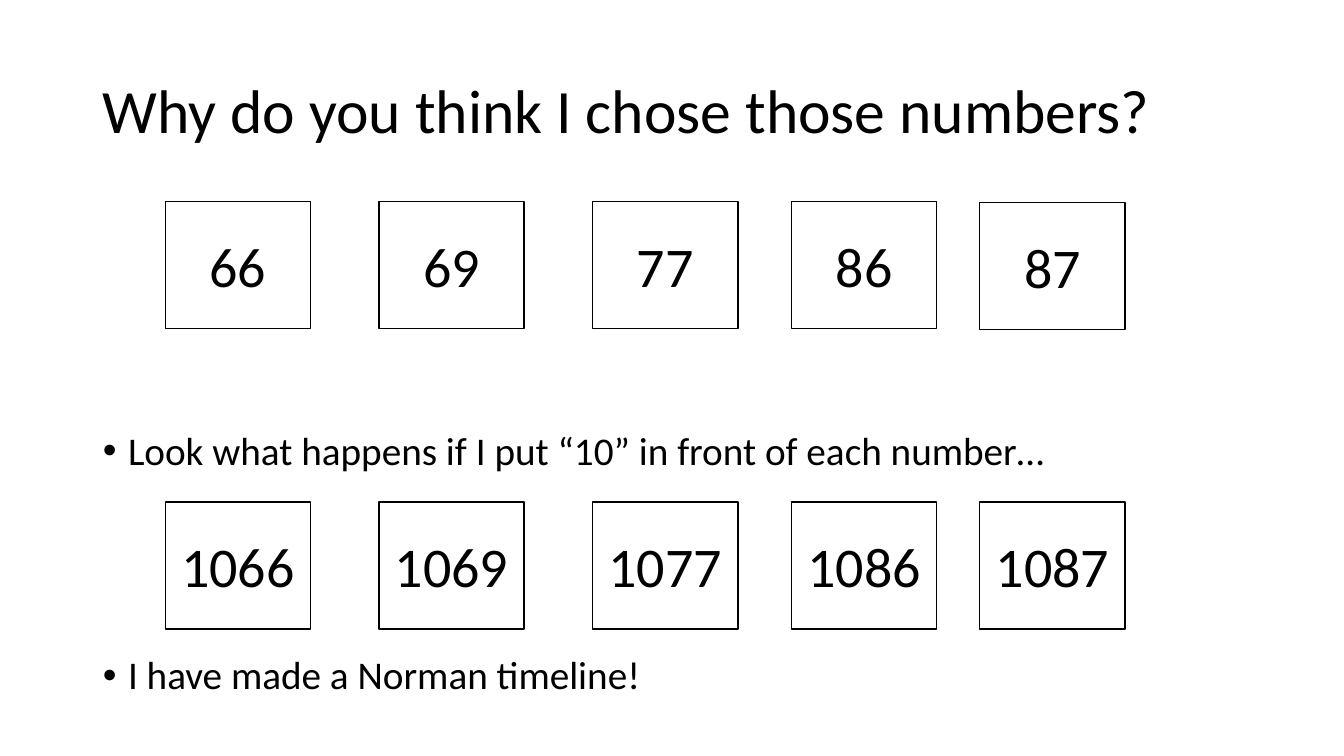
from dataclasses import dataclass

from lxml.etree import SubElement
from pptx import Presentation
from pptx.dml.color import RGBColor
from pptx.enum.shapes import MSO_SHAPE
from pptx.enum.text import MSO_ANCHOR, MSO_AUTO_SIZE, PP_ALIGN
from pptx.oxml.ns import qn
from pptx.util import Inches, Pt

BLACK = RGBColor(0, 0, 0)
WHITE = RGBColor(255, 255, 255)
FONT = "Calibri"
SLIDE_WIDTH, SLIDE_HEIGHT = Inches(13.33), Inches(7.5)


@dataclass(frozen=True)
class Area:
    """A rectangle in percent of the slide's width and height."""
    left: float
    top: float
    width: float
    height: float

    def emu(self) -> tuple[int, int, int, int]:
        return (round(self.left * SLIDE_WIDTH / 100), round(self.top * SLIDE_HEIGHT / 100),
                round(self.width * SLIDE_WIDTH / 100), round(self.height * SLIDE_HEIGHT / 100))


@dataclass(frozen=True)
class Event:
    number: str
    left: float
    number_top: float = 26.67


TITLE_AREA = Area(6.9, 5.33, 86.25, 19.33)
BODY_AREA = Area(6.9, 56.4, 86.25, 41.2)
CARD_WIDTH, CARD_HEIGHT = 10.8, 16.8
YEAR_TOP = 66.4
GAP_FOR_YEARS = Pt(130)

EVENTS = [
    Event("66", 12.3),
    Event("69", 28.2),
    Event("77", 44.1),
    Event("86", 58.9),
    Event("87", 72.9, 26.8),
]
REMARKS = [
    "Look what happens if I put “10” in front of each number…",
    "I have made a Norman timeline!",
]


def style(paragraph, size: int) -> None:
    for run in paragraph.runs:
        run.font.size = Pt(size)
        run.font.name = FONT
        run.font.color.rgb = BLACK


def place(placeholder, area: Area) -> None:
    placeholder.left, placeholder.top, placeholder.width, placeholder.height = area.emu()
    placeholder.text_frame.auto_size = MSO_AUTO_SIZE.NONE


def add_title(slide, text: str) -> None:
    title = slide.shapes.title
    place(title, TITLE_AREA)
    title.text_frame.text = text
    title.text_frame.vertical_anchor = MSO_ANCHOR.MIDDLE
    heading = title.text_frame.paragraphs[0]
    heading.alignment = PP_ALIGN.LEFT
    heading.line_spacing = 0.9
    style(heading, 44)


def add_remarks(slide, remarks: list[str]) -> None:
    """Fill the body with bullets, leaving room for the row of years between them."""
    body = slide.placeholders[1]
    place(body, BODY_AREA)
    body.text_frame.text = "\n".join(remarks)
    for index, remark in enumerate(body.text_frame.paragraphs):
        properties = remark._p.get_or_add_pPr()
        properties.set("marL", str(Inches(0.25)))
        properties.set("indent", str(-Inches(0.25)))
        SubElement(properties, qn("a:buFont"), typeface="Arial")
        SubElement(properties, qn("a:buChar"), char="•")
        remark.line_spacing = 0.9
        remark.space_before = GAP_FOR_YEARS if index else Pt(0)
        style(remark, 28)


def add_card(slide, text: str, area: Area) -> None:
    card = slide.shapes.add_shape(MSO_SHAPE.RECTANGLE, *area.emu())
    card.shadow.inherit = False
    card.fill.solid()
    card.fill.fore_color.rgb = WHITE
    card.line.color.rgb = BLACK
    card.line.width = Pt(1)
    card.text_frame.text = text
    card.text_frame.vertical_anchor = MSO_ANCHOR.MIDDLE
    label = card.text_frame.paragraphs[0]
    label.alignment = PP_ALIGN.CENTER
    style(label, 40)


def main() -> None:
    deck = Presentation()
    deck.slide_width, deck.slide_height = SLIDE_WIDTH, SLIDE_HEIGHT
    slide = deck.slides.add_slide(deck.slide_layouts[1])
    add_title(slide, "Why do you think I chose those numbers?")
    add_remarks(slide, REMARKS)
    for event in EVENTS:
        add_card(slide, event.number, Area(event.left, event.number_top, CARD_WIDTH, CARD_HEIGHT))
    for event in EVENTS:
        add_card(slide, "10" + event.number, Area(event.left, YEAR_TOP, CARD_WIDTH, CARD_HEIGHT))
    deck.save("out.pptx")


if __name__ == "__main__":
    main()
